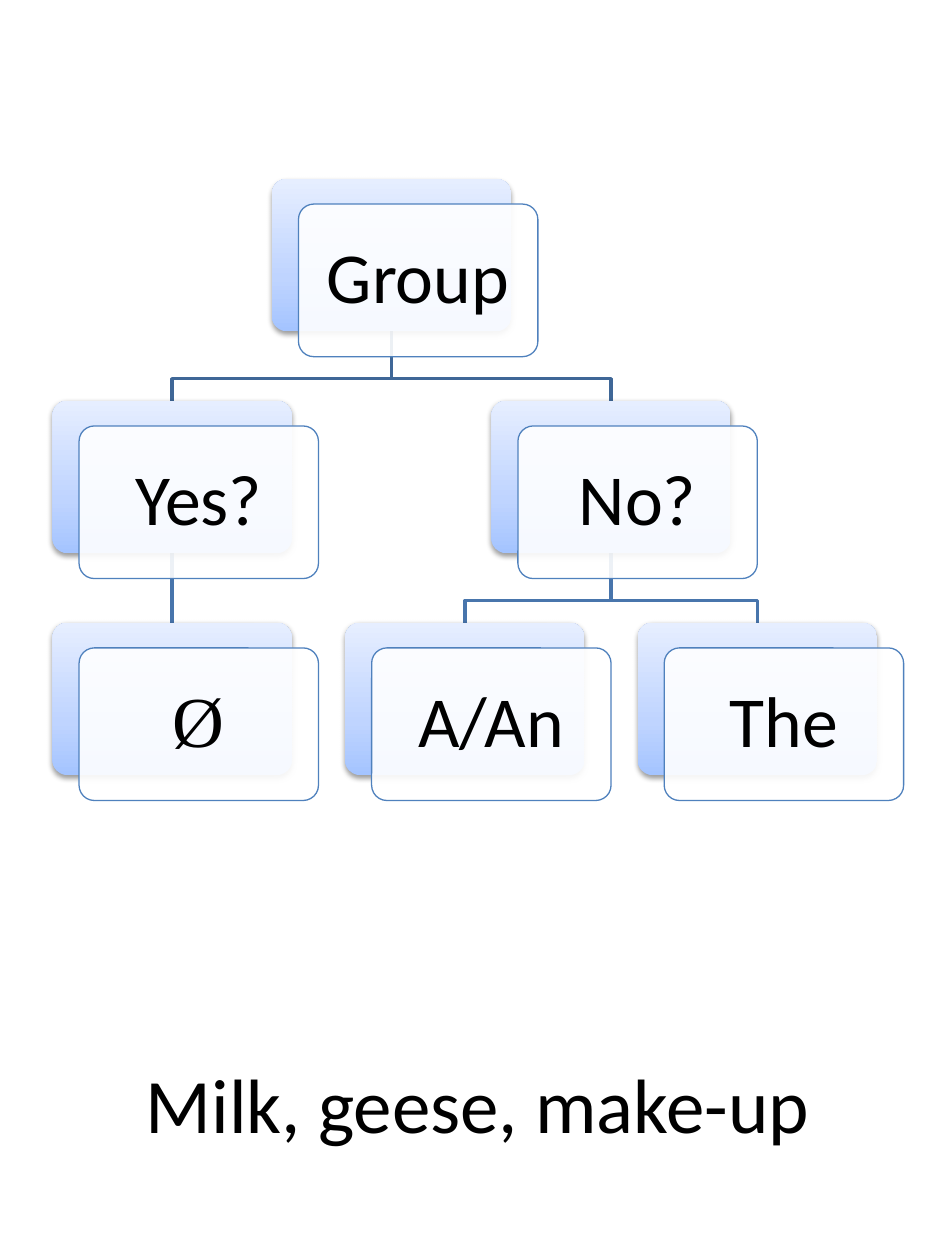
from copy import deepcopy
from dataclasses import dataclass

from pptx import Presentation
from pptx import util as u
from pptx.dml.color import RGBColor
from pptx.enum import shapes, text
from pptx.oxml import parse_xml
from pptx.oxml.ns import nsdecls, qn

Pt = u.Pt


@dataclass(frozen=True)
class Theme:
    font: str = "Calibri"
    symbol_font: str = "Times New Roman"
    title_size: float = 44
    card_size: float = 41
    ink: RGBColor = RGBColor.from_string("000000")
    white: RGBColor = RGBColor.from_string("FFFFFF")
    outline: RGBColor = RGBColor.from_string("4F81BD")
    upper_branch: RGBColor = RGBColor.from_string("3F6797")
    lower_branch: RGBColor = RGBColor.from_string("4875AC")
    gradient: tuple = ((0, "A4C4FF"), (0.35, "BFD4FF"), (1, "E6EEFF"))


theme = Theme()


def write(shape, words, size, font, inset):
    frame = shape.text_frame
    frame.word_wrap = True
    frame.vertical_anchor = text.MSO_ANCHOR.MIDDLE
    frame.margin_left = frame.margin_right = Pt(inset)
    frame.margin_top = frame.margin_bottom = Pt(inset)
    paragraph = frame.paragraphs[0]
    paragraph.alignment = text.PP_ALIGN.CENTER
    run = paragraph.add_run()
    run.text = words
    run.font.size = Pt(size)
    run.font.name = font
    run.font.color.rgb = theme.ink
    return paragraph


def add_card(left, top):
    shape = slide.shapes.add_shape(
        shapes.MSO_SHAPE.ROUNDED_RECTANGLE, Pt(left), Pt(top), Pt(card_width), Pt(card_height))
    shape.adjustments[0] = 0.1
    shape.shadow.inherit = False
    return shape


presentation = Presentation()
presentation.slide_width, presentation.slide_height = Pt(540), Pt(720)
slide = presentation.slides.add_slide(presentation.slide_layouts[6])

# Title
title = slide.shapes.add_textbox(Pt(30), Pt(570), Pt(486), Pt(120))
write(title, "Milk, geese, make-up", theme.title_size, theme.font, 4)

# Tree grid: name -> (column, level)
card_width, card_height = 136.8, 87.2
offset_x, offset_y = 15.2, 14.45
grid_left, grid_top = 30, 102.2
column_step, level_step = 167.2, 126.8
nodes = {
    "Group": (0.75, 0),
    "Yes?": (0, 1),
    "Ø": (0, 2),
    "No?": (1.5, 1),
    "A/An": (1, 2),
    "The": (2, 2),
}
corners = {name: (grid_left + column * column_step, grid_top + level * level_step)
           for name, (column, level) in nodes.items()}

# Branches, behind the cards
branches = [("No?", "The"), ("No?", "A/An"), ("Group", "No?"), ("Yes?", "Ø"), ("Group", "Yes?")]
straight = []
for parent, child in branches:
    start_x, end_x = (corners[name][0] + card_width / 2 for name in (parent, child))
    start_y, end_y = corners[parent][1] + card_height, corners[child][1]
    if start_x == end_x:
        branch = slide.shapes.add_connector(
            shapes.MSO_CONNECTOR.STRAIGHT, Pt(start_x), Pt(start_y), Pt(end_x), Pt(end_y))
        branch.element.spPr.append(parse_xml(f"<a:effectLst {nsdecls('a')}/>"))
        straight.append((branch, parent, child))
    else:
        bend_y = start_y + 27
        builder = slide.shapes.build_freeform(Pt(start_x), Pt(start_y))
        builder.add_line_segments(
            [(Pt(x), Pt(y)) for x, y in
             ((start_x, bend_y), (end_x, bend_y), (end_x, end_y))], close=False)
        branch = builder.convert_to_shape()
        branch.fill.background()
        branch.shadow.inherit = False
    branch.line.color.rgb = theme.upper_branch if parent == "Group" else theme.lower_branch
    branch.line.width = Pt(2)

# Cards: a shaded back and a translucent front with the label
backs = {}
for name, (left, top) in corners.items():
    back = backs[name] = add_card(left, top)
    back.line.fill.background()
    back.fill.gradient()
    back.fill.gradient_angle = 90
    stops = back.element.spPr.find(qn("a:gradFill")).find(qn("a:gsLst"))
    stops.append(deepcopy(stops[0]))
    for stop, (position, color) in zip(back.fill.gradient_stops, theme.gradient):
        stop.position = position
        stop.color.rgb = RGBColor.from_string(color)
    back.element.spPr.find(qn("a:effectLst")).append(parse_xml(
        f'<a:outerShdw {nsdecls("a")} blurRad="{Pt(3.1)}" dist="{Pt(1.6)}" dir="5400000" '
        'rotWithShape="0"><a:srgbClr val="000000"><a:alpha val="38000"/></a:srgbClr>'
        '</a:outerShdw>'))

    front = add_card(left + offset_x, top + offset_y)
    front.fill.solid()
    front.fill.fore_color.rgb = theme.white
    color = front.element.spPr.find(qn("a:solidFill"))[0]
    color.append(parse_xml(f'<a:alpha {nsdecls("a")} val="90000"/>'))
    front.line.color.rgb = theme.outline
    front.line.width = Pt(0.75)
    font = theme.symbol_font if name == "Ø" else theme.font
    write(front, name, theme.card_size, font, 9.7).line_spacing = 0.9

# Join the straight branch to its cards
for branch, parent, child in straight:
    branch.begin_connect(backs[parent], 2)
    branch.end_connect(backs[child], 0)

presentation.save("out.pptx")
